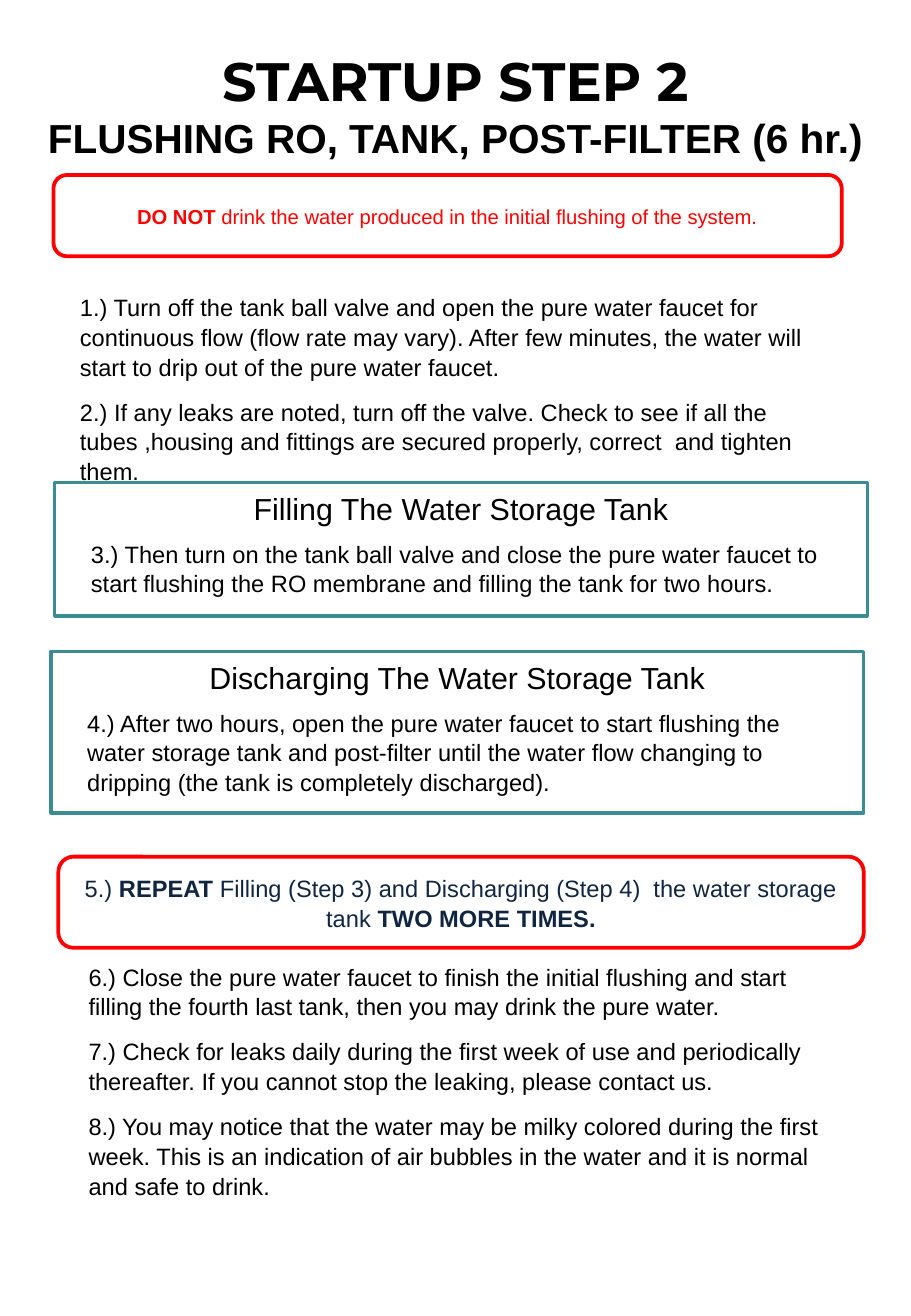
from pptx import Presentation
from pptx.dml.color import RGBColor
from pptx.enum.shapes import MSO_SHAPE
from pptx.enum.text import MSO_ANCHOR, MSO_AUTO_SIZE, PP_ALIGN
from pptx.util import Pt

BLACK = RGBColor(0x00, 0x00, 0x00)
RED = RGBColor(0xFF, 0x00, 0x00)
TEAL = RGBColor(0x3C, 0x8C, 0x93)
NAVY = RGBColor(0x10, 0x25, 0x3F)

BODY = {"size": Pt(14), "name": "Arial", "bold": False}
HEADING = {"size": Pt(18), "name": "Arial", "bold": False}
WARNING = {"size": Pt(12), "name": "Arial"}
TITLE = {"size": Pt(32), "name": "Montserrat", "bold": True}
SUBTITLE = {"size": Pt(24), "name": "Arial", "bold": True}
STEP_SPACING = {"space_before": Pt(9), "line_spacing": 1.05}
CENTERED = {"alignment": PP_ALIGN.CENTER, "line_spacing": 1.05}
TITLE_SPACING = {
    "alignment": PP_ALIGN.CENTER,
    "line_spacing": 1.0,
    "space_before": Pt(0),
    "space_after": Pt(0.6),
}


def apply_format(target, values):
    """Set each attribute of the target from a dict of values."""
    for attribute, value in values.items():
        setattr(target, attribute, value)


def add_run(paragraph, text, font_format, color=BLACK):
    """Append a formatted run to the paragraph."""
    run = paragraph.add_run()
    run.text = text
    apply_format(run.font, font_format)
    run.font.color.rgb = color


def add_texts(shapes, box, texts, font_format, paragraph_format):
    """Place a wrapped text box with one paragraph for each text."""
    frame = shapes.add_textbox(*map(Pt, box)).text_frame
    frame.word_wrap = True
    for index, text in enumerate(texts):
        paragraph = frame.add_paragraph() if index else frame.paragraphs[0]
        apply_format(paragraph, paragraph_format)
        add_run(paragraph, text, font_format)


def add_outline(shapes, kind, box, color, width):
    """Place an unfilled shape with a coloured outline."""
    shape = shapes.add_shape(kind, *map(Pt, box))
    shape.shadow.inherit = False
    shape.fill.background()
    shape.line.color.rgb = color
    shape.line.width = Pt(width)
    return shape


def add_title(slide, box, lines):
    """Move the title placeholder to the box and fill in its lines."""
    title = slide.shapes.title
    left, top, width, height = map(Pt, box)
    apply_format(title, {"left": left, "top": top, "width": width, "height": height})
    frame = title.text_frame
    apply_format(frame, {
        "word_wrap": True,
        "auto_size": MSO_AUTO_SIZE.NONE,
        "vertical_anchor": MSO_ANCHOR.MIDDLE,
    })
    for index, (text, font_format) in enumerate(lines):
        paragraph = frame.add_paragraph() if index else frame.paragraphs[0]
        apply_format(paragraph, TITLE_SPACING)
        add_run(paragraph, text, font_format)


def add_notice(slide, box, runs, font_format, color):
    """Place a red rounded frame with centred text of plain and bold runs."""
    shape = add_outline(slide.shapes, MSO_SHAPE.ROUNDED_RECTANGLE, box, RED, 2.25)
    frame = shape.text_frame
    apply_format(frame, {"word_wrap": True, "vertical_anchor": MSO_ANCHOR.MIDDLE})
    paragraph = frame.paragraphs[0]
    apply_format(paragraph, CENTERED)
    for text, bold in runs:
        add_run(paragraph, text, font_format | {"bold": bold}, color)


def add_tank_panel(slide, box, heading, step):
    """Place a teal frame with a heading and one step inside."""
    left, top, width, height = box
    shapes = slide.shapes.add_group_shape().shapes
    add_outline(shapes, MSO_SHAPE.RECTANGLE, box, TEAL, 2)
    add_texts(shapes, (left + 1.5, top, width - 3, 29), [heading], HEADING, CENTERED)
    step_box = (left + 14.4, top + 29.5, 457.2, height - 38)
    add_texts(shapes, step_box, [step], BODY, STEP_SPACING)


def add_steps(slide, box, steps):
    """Place a list of numbered steps in the box."""
    add_texts(slide.shapes, box, steps, BODY, STEP_SPACING)


def build_startup_slide(presentation):
    """Build the startup instructions from top to bottom."""
    slide = presentation.slides.add_slide(presentation.slide_layouts[5])
    add_title(slide, (0, 23, 540, 77.8), [
        ("STARTUP STEP 2", TITLE),
        ("FLUSHING RO, TANK, POST-FILTER (6 hr.)", SUBTITLE),
    ])
    add_notice(slide, (31.7, 103.7, 467.3, 48.2), [
        ("DO NOT ", True),
        ("drink the water produced in the initial flushing of the system.", False),
    ], WARNING, RED)
    add_steps(slide, (40.3, 169.2, 458.6, 102.2), [
        "1.) Turn off the tank ball valve and open the pure water faucet for "
        "continuous flow (flow rate may vary). After few minutes, the water will "
        "start to drip out of the pure water faucet.",
        "2.) If any leaks are noted, turn off the valve. Check to see if all the "
        "tubes ,housing and fittings are secured properly, correct  and tighten them.",
    ])
    add_tank_panel(
        slide, (32.4, 285.8, 481.7, 79.2), "Filling The Water Storage Tank",
        "3.) Then turn on the tank ball valve and close the pure water faucet to "
        "start flushing the RO membrane and filling the tank for two hours.",
    )
    add_tank_panel(
        slide, (30.2, 385.9, 481.7, 95.8), "Discharging The Water Storage Tank",
        "4.) After two hours, open the pure water faucet to start flushing the "
        "water storage tank and post-filter until the water flow changing to "
        "dripping (the tank is completely discharged).",
    )
    add_notice(slide, (34.6, 507.6, 477.4, 54), [
        ("5.) ", False),
        ("REPEAT ", True),
        ("Filling (Step 3) and Discharging (Step 4)  the water storage tank ", False),
        ("TWO MORE TIMES.", True),
    ], BODY, NAVY)
    add_steps(slide, (45.4, 565.9, 458.6, 141.8), [
        "6.) Close the pure water faucet to finish the initial flushing and start "
        "filling the fourth last tank, then you may drink the pure water.",
        "7.) Check for leaks daily during the first week of use and periodically "
        "thereafter. If you cannot stop the leaking, please contact us.",
        "8.) You may notice that the water may be milky colored during the first "
        "week. This is an indication of air bubbles in the water and it is normal "
        "and safe to drink.",
    ])


def main():
    """Create and save the presentation."""
    presentation = Presentation()
    apply_format(presentation, {"slide_width": Pt(540), "slide_height": Pt(779.76)})
    build_startup_slide(presentation)
    presentation.save("out.pptx")


if __name__ == "__main__":
    main()
